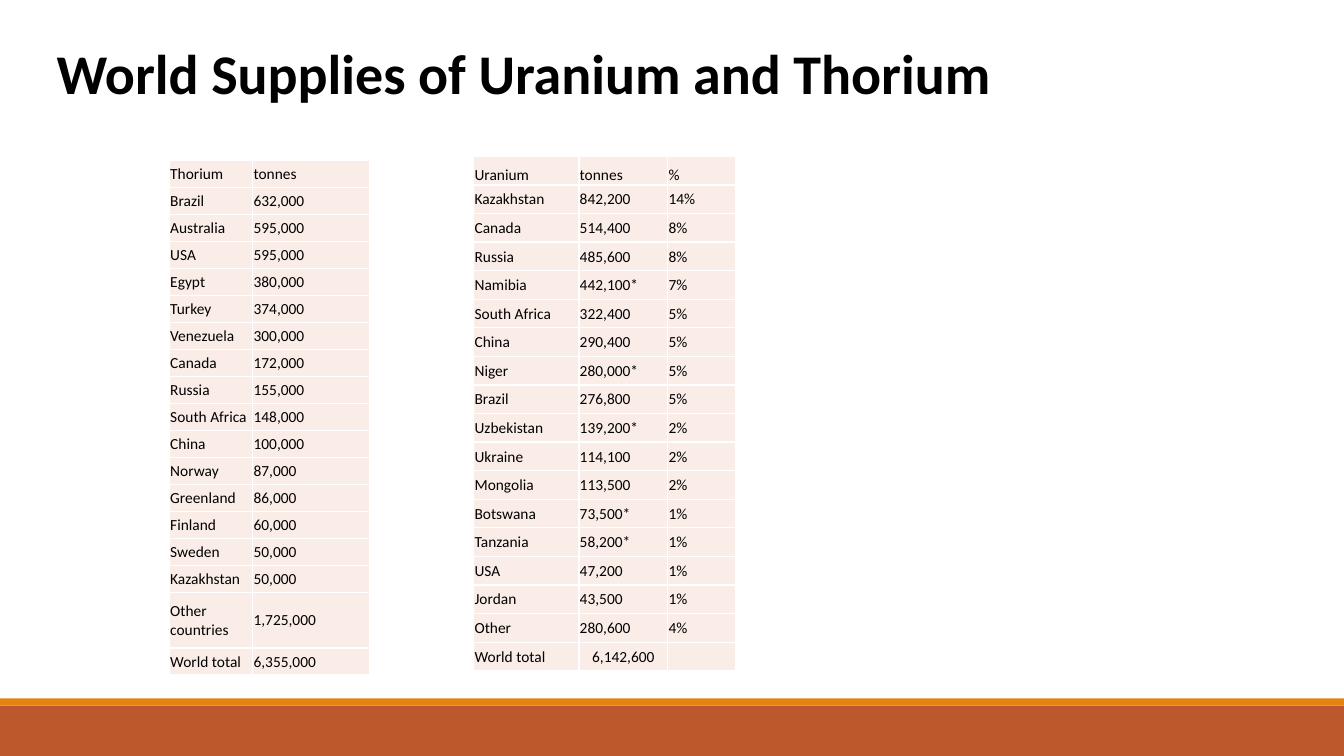
from pptx import Presentation
from pptx.dml.color import RGBColor as RGB
from pptx.enum.shapes import MSO_SHAPE as Shape
from pptx.enum.text import MSO_ANCHOR as Anchor, PP_ALIGN as Align
from pptx.oxml import parse_xml
from pptx.oxml.ns import nsdecls
from pptx.util import Cm, Pt

RUST = RGB(0xBD, 0x58, 0x2C)
ORANGE = RGB(0xE4, 0x83, 0x12)
BLUSH = RGB(0xFA, 0xED, 0xE7)
BLACK = RGB(0, 0, 0)
FONT = "Calibri"

THORIUM = [
    ("Thorium", "tonnes"),
    ("Brazil", "632,000"),
    ("Australia", "595,000"),
    ("USA", "595,000"),
    ("Egypt", "380,000"),
    ("Turkey", "374,000"),
    ("Venezuela", "300,000"),
    ("Canada", "172,000"),
    ("Russia", "155,000"),
    ("South Africa", "148,000"),
    ("China", "100,000"),
    ("Norway", "87,000"),
    ("Greenland", "86,000"),
    ("Finland", "60,000"),
    ("Sweden", "50,000"),
    ("Kazakhstan", "50,000"),
    ("Other countries", "1,725,000"),
    ("World total", "6,355,000"),
]
URANIUM = [
    ("Uranium", "tonnes", "%"),
    ("Kazakhstan", "842,200", "14%"),
    ("Canada", "514,400", "8%"),
    ("Russia", "485,600", "8%"),
    ("Namibia", "442,100*", "7%"),
    ("South Africa", "322,400", "5%"),
    ("China", "290,400", "5%"),
    ("Niger", "280,000*", "5%"),
    ("Brazil", "276,800", "5%"),
    ("Uzbekistan", "139,200*", "2%"),
    ("Ukraine", "114,100", "2%"),
    ("Mongolia", "113,500", "2%"),
    ("Botswana", "73,500*", "1%"),
    ("Tanzania", "58,200*", "1%"),
    ("USA", "47,200", "1%"),
    ("Jordan", "43,500", "1%"),
    ("Other", "280,600", "4%"),
    ("World total", "6,142,600", ""),
]


def style(par, size, bold=False):
    for run in par.runs:
        font = run.font
        font.name, font.size, font.bold = FONT, Pt(size), bold
        font.color.rgb = BLACK


def add_grid(slide, data, left, top, widths, step):
    frame = slide.shapes.add_table(len(data), len(widths), Cm(left), Cm(top),
                                   Cm(sum(widths)), Cm(step * len(data)))
    grid = frame.table
    grid.first_row = grid.horz_banding = False
    for col, width in zip(grid.columns, widths):
        col.width = Cm(width)
    for row, texts in zip(grid.rows, data):
        row.height = Cm(step)
        for cell, text in zip(row.cells, texts):
            cell.margin_left = cell.margin_right = cell.margin_top = Cm(0.02)
            cell.margin_bottom = 0
            cell.vertical_anchor = Anchor.MIDDLE
            # White cell borders
            for side in ("lnL", "lnR", "lnT", "lnB"):
                cell._tc.get_or_add_tcPr().append(parse_xml(
                    f'<a:{side} {nsdecls("a")} w="12700"><a:solidFill>'
                    f'<a:srgbClr val="FFFFFF"/></a:solidFill></a:{side}>'))
            cell.fill.solid()
            cell.fill.fore_color.rgb = BLUSH
            par = cell.text_frame.paragraphs[0]
            if text:
                par.text = text
                style(par, 11)
            else:
                # Keeps an empty cell from stretching its row
                par._p.append(parse_xml(
                    f'<a:endParaRPr {nsdecls("a")} sz="1100"/>'))
    return grid


deck = Presentation()
deck.slide_width, deck.slide_height = Cm(33.87), Cm(19.05)
slide = deck.slides.add_slide(deck.slide_layouts[5])

# Footer bands
for top, height, color in ((17.78, 1.27, RUST), (17.6, 0.18, ORANGE)):
    band = slide.shapes.add_shape(Shape.RECTANGLE, 0, Cm(top),
                                  deck.slide_width, Cm(height))
    band.shadow.inherit = False
    band.fill.solid()
    band.fill.fore_color.rgb = color
    band.line.fill.background()

# Title
title = slide.shapes.title
title.left, title.top = Cm(1.17), Cm(0.84)
title.width, title.height = Cm(24.77), Cm(1.96)
box = title.text_frame
box.text = "World Supplies of Uranium and Thorium"
box.word_wrap = True
box.vertical_anchor = Anchor.TOP
head = box.paragraphs[0]
head.alignment = Align.LEFT
style(head, 40, True)

# Thorium table, with a taller row for the wrapped label
thorium = add_grid(slide, THORIUM, 4.27, 4.05, (2.1, 2.95), 0.68)
thorium.rows[16].height = Cm(1.4)

# Uranium table, with a low header and a centred total
uranium = add_grid(slide, URANIUM, 11.94, 3.94, (2.65, 2.24, 1.7), 0.72)
for cell in uranium.rows[0].cells:
    cell.vertical_anchor = Anchor.BOTTOM
uranium.cell(17, 1).text_frame.paragraphs[0].alignment = Align.CENTER

deck.save("out.pptx")
